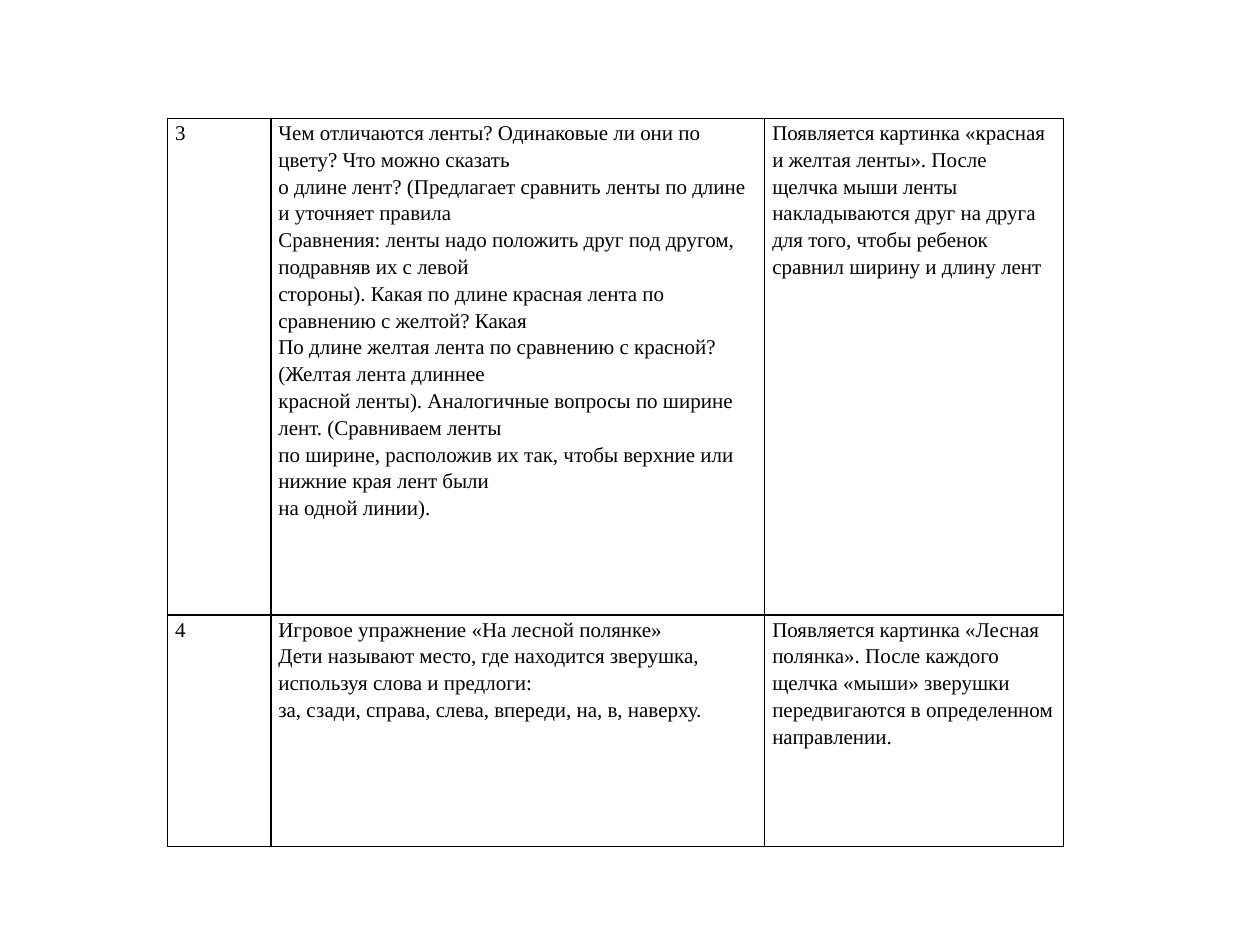
from pptx import Presentation
from pptx.dml.color import RGBColor
from pptx.oxml import parse_xml
from pptx.oxml.ns import nsdecls
from pptx.util import Inches, Pt

COL_WIDTHS = [0.82, 3.92, 2.37]
ROW_HEIGHTS = [3.94, 1.84]

# Each cell is a list of paragraphs
ROWS = [
    [
        ["3"],
        [
            "Чем отличаются ленты? Одинаковые ли они по цвету? Что можно сказать",
            "о длине лент? (Предлагает сравнить ленты по длине и уточняет правила",
            "Сравнения: ленты надо положить друг под другом, подравняв их с левой",
            "стороны). Какая по длине красная лента по сравнению с желтой? Какая",
            "По длине желтая лента по сравнению с красной? (Желтая лента длиннее",
            "красной ленты). Аналогичные вопросы по ширине лент. (Сравниваем ленты",
            "по ширине, расположив их так, чтобы верхние или нижние края лент были",
            "на одной линии).",
        ],
        ["Появляется картинка «красная и желтая ленты». После щелчка мыши ленты "
         "накладываются друг на друга для того, чтобы ребенок сравнил ширину и длину лент"],
    ],
    [
        ["4"],
        [
            "Игровое упражнение «На лесной полянке»",
            "Дети называют место, где находится зверушка, используя слова и предлоги:",
            "за, сзади, справа, слева, впереди, на, в, наверху.",
        ],
        ["Появляется картинка «Лесная полянка». После каждого щелчка «мыши» зверушки "
         "передвигаются в определенном направлении."],
    ],
]


def rgb(value):
    return RGBColor.from_string(value)


class SlideBuilder:
    font = "Times New Roman"
    size = 12
    ink = "000000"
    paper = "FFFFFF"
    line_spacing = 1.15
    border = 1

    def __init__(self, slide):
        self.s = slide

    def background(self):
        fill = self.s.background.fill
        fill.solid()
        fill.fore_color.rgb = rgb(self.paper)

    def table(self, left, top, widths, heights, rows):
        frame = self.s.shapes.add_table(
            len(rows), len(widths), Inches(left), Inches(top),
            Inches(sum(widths)), Inches(sum(heights)))
        table = frame.table
        table.first_row = table.horz_banding = False
        for column, width in zip(table.columns, widths):
            column.width = Inches(width)
        for row, height, texts in zip(table.rows, heights, rows):
            row.height = Inches(height)
            for cell, paragraphs in zip(row.cells, texts):
                self.cell(cell, paragraphs)

    def cell(self, cell, paragraphs):
        cell.margin_left = cell.margin_right = Inches(0.06)
        cell.margin_top = cell.margin_bottom = 0
        self.cell_borders(cell)
        cell.fill.background()
        tf = cell.text_frame
        tf.text = "\n".join(paragraphs)
        for p in tf.paragraphs:
            p.line_spacing = self.line_spacing
            p.font.name = self.font
            p.font.size = Pt(self.size)
            p.font.color.rgb = rgb(self.ink)

    def cell_borders(self, cell):
        tc_pr = cell._tc.get_or_add_tcPr()
        for side in ("lnL", "lnR", "lnT", "lnB"):
            tc_pr.append(parse_xml(
                f'<a:{side} {nsdecls("a")} w="{Pt(self.border)}"><a:solidFill>'
                f'<a:srgbClr val="{self.ink}"/></a:solidFill></a:{side}>'))


def main():
    prs = Presentation()
    prs.slide_width, prs.slide_height = Inches(10), Inches(7.5)
    blank = prs.slide_layouts[6]
    builder = SlideBuilder(prs.slides.add_slide(blank))
    builder.background()

    # Lesson plan table
    builder.table(1.33, 0.94, COL_WIDTHS, ROW_HEIGHTS, ROWS)
    prs.save("out.pptx")


if __name__ == "__main__":
    main()
